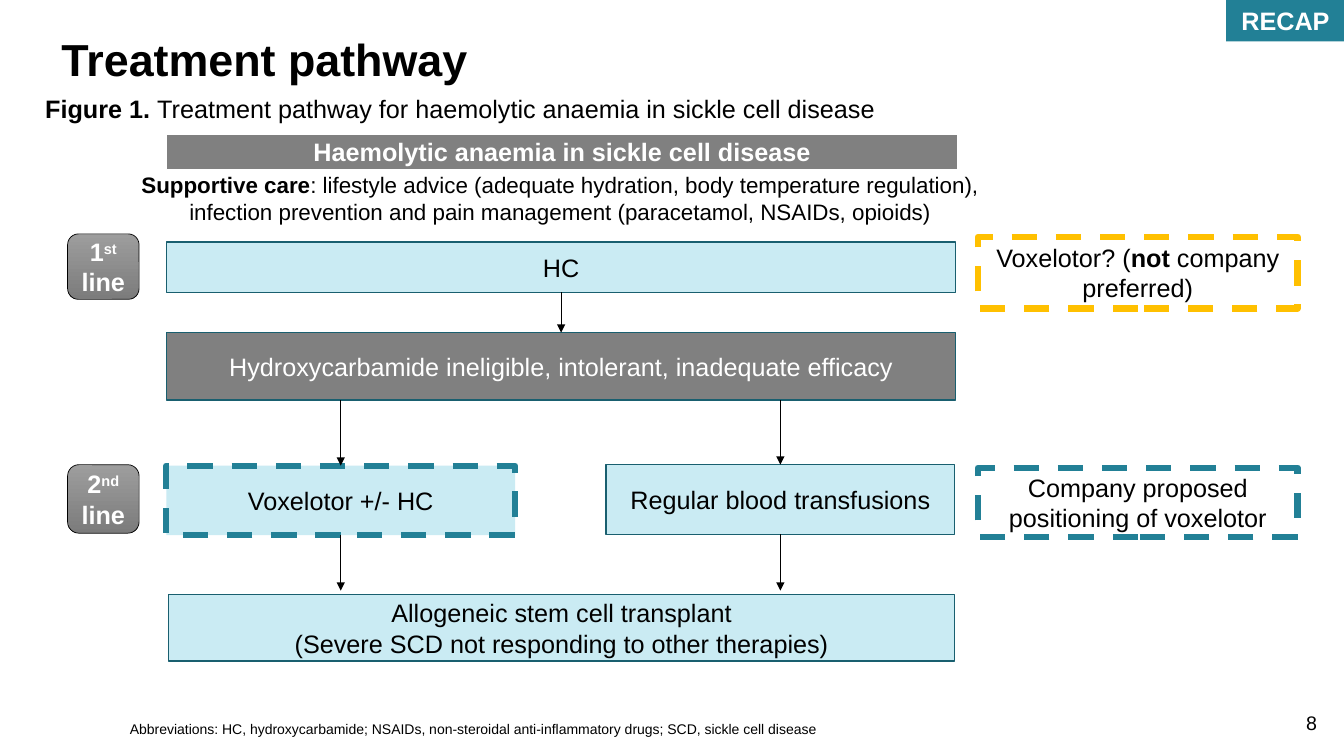
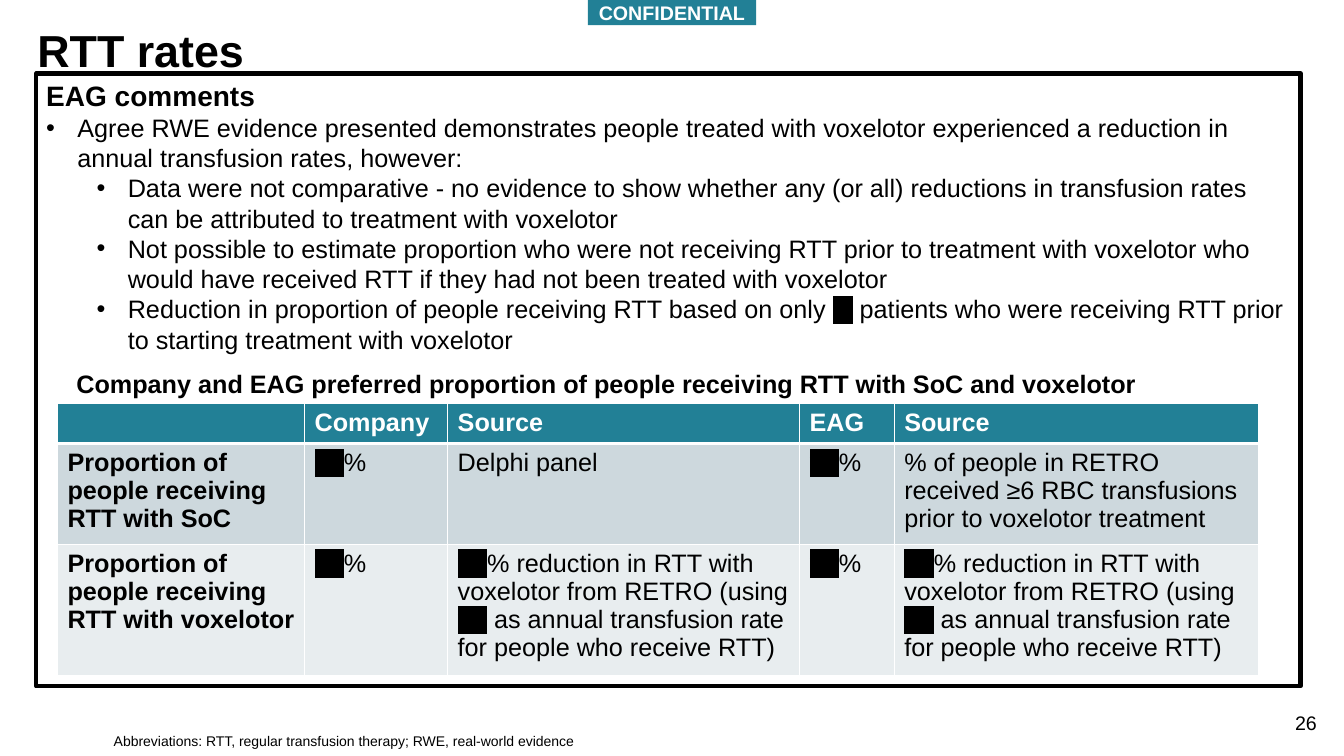
from lxml.etree import SubElement
from pptx import Presentation
from pptx.dml.color import RGBColor
from pptx.enum.dml import MSO_LINE
from pptx.enum.shapes import MSO_CONNECTOR, MSO_SHAPE
from pptx.enum.text import MSO_ANCHOR, PP_ALIGN
from pptx.oxml.ns import qn
from pptx.util import Inches, Pt

COLORS = {
    "black": "000000",
    "white": "FFFFFF",
    "teal": "228096",
    "dark_teal": "195F6F",
    "pale_blue": "CAEBF3",
    "grey": "808080",
    "amber": "FFC000",
    "light_grey": "9D9D9D",
    "deep_grey": "7C7C7C",
    "row_dark": "CDD8DD",
    "row_light": "E8EDEF",
}
RGB = {name: RGBColor.from_string(value) for name, value in COLORS.items()}
FONT = "Arial"
BOTTOM, TOP = 2, 0


def write_text(frame, text, size=18, color="black", bold=False,
               align=PP_ALIGN.LEFT, spacing=None, indents=()):
    paragraphs = text if isinstance(text, list) else [text]
    for index, content in enumerate(paragraphs):
        paragraph = frame.paragraphs[0] if index == 0 else frame.add_paragraph()
        paragraph.alignment = align
        if spacing:
            paragraph.line_spacing = spacing
        if indents and indents[index]:
            paragraph.level = 1 if indents[index] > 0.5 else 0
            properties = paragraph._p.get_or_add_pPr()
            properties.set("marL", str(Inches(indents[index])))
            properties.set("indent", str(Inches(-0.31)))
            SubElement(properties, qn("a:buFont")).set("typeface", FONT)
            SubElement(properties, qn("a:buChar")).set("char", "•")
        runs = ((content, ""),) if isinstance(content, str) else content
        for words, style in runs:
            run = paragraph.add_run()
            run.text = words
            run.font.name = FONT
            run.font.size = Pt(20 if style == "heading" else size)
            run.font.bold = bold or style in ("bold", "heading")
            run.font.color.rgb = RGB[color]
            properties = run._r.get_or_add_rPr()
            if style == "raised":
                properties.set("baseline", "30000")
            if style == "redacted":
                highlight = SubElement(properties, qn("a:highlight"))
                SubElement(highlight, qn("a:srgbClr")).set("val", COLORS["black"])
                properties.find(qn("a:solidFill")).addnext(highlight)


def add_box(slide, text, left, top, width, height, kind=None, fill=None, line=None,
            weight=1, dashed=False, anchor=MSO_ANCHOR.TOP, wrap=True, **text_format):
    place = [Inches(length) for length in (left, top, width, height)]
    if kind is None:
        shape = slide.shapes.add_textbox(*place)
    else:
        shape = slide.shapes.add_shape(kind, *place)
        shape.shadow.inherit = False
        if fill:
            shape.fill.solid()
            shape.fill.fore_color.rgb = RGB[fill]
        else:
            shape.fill.background()
        if line:
            shape.line.color.rgb = RGB[line]
            shape.line.width = Pt(weight)
            if dashed:
                shape.line.dash_style = MSO_LINE.DASH
        else:
            shape.line.fill.background()
    shape.text_frame.word_wrap = wrap
    shape.text_frame.vertical_anchor = anchor
    write_text(shape.text_frame, text, **text_format)
    return shape


presentation = Presentation()
presentation.slide_width = Inches(13.33)
presentation.slide_height = Inches(7.5)

CENTERED = {"kind": MSO_SHAPE.RECTANGLE, "anchor": MSO_ANCHOR.MIDDLE, "align": PP_ALIGN.CENTER}

slide_frames = [
    ("Treatment pathway", (0.51, 0.29), "8", "RECAP", (12.16, 0, 1.18, 0.41), 18,
     "Abbreviations: HC, hydroxycarbamide; NSAIDs, non-steroidal anti-inflammatory drugs; "
     "SCD, sickle cell disease", (1.19, 7.12)),
    ("RTT rates", (0.27, 0.2), "26", "CONFIDENTIAL", (5.83, 0, 1.67, 0.25), 14,
     "Abbreviations: RTT, regular transfusion therapy; RWE, real-world evidence", (1.03, 7.24)),
]
slides = []
for heading, heading_at, number, tag, tag_box, tag_size, footnote, footnote_at in slide_frames:
    slide = presentation.slides.add_slide(presentation.slide_layouts[5])
    title = slide.shapes.title
    title.left, title.top = [Inches(length) for length in heading_at]
    title.width, title.height = Inches(12.3), Inches(0.65)
    title.text_frame.vertical_anchor = MSO_ANCHOR.MIDDLE
    write_text(title.text_frame, heading, size=32, bold=True, spacing=0.9)
    add_box(slide, number, 12.65, 7, 0.51, 0.4, size=14, align=PP_ALIGN.RIGHT)
    add_box(slide, tag, *tag_box, fill="teal", size=tag_size, color="white", bold=True,
            wrap=False, **CENTERED)
    add_box(slide, footnote, *footnote_at, 11.3, 0.34, size=10, spacing=0.9)
    slides.append(slide)
pathway, rates = slides

add_box(pathway, (("Figure 1. ", "bold"),
                  ("Treatment pathway for haemolytic anaemia in sickle cell disease", "")),
        0.35, 0.88, 8.44, 0.4)
add_box(pathway, (("Supportive care", "bold"),
                  (": lifestyle advice (adequate hydration, body temperature regulation), "
                   "infection prevention and pain management (paracetamol, NSAIDs, opioids)", "")),
        1.01, 1.65, 9.09, 0.64, size=16, align=PP_ALIGN.CENTER)
add_box(pathway, "Haemolytic anaemia in sickle cell disease", 1.65, 1.33, 7.85, 0.35,
        fill="grey", line="white", color="white", bold=True, **CENTERED)

STEP = {"fill": "pale_blue", "line": "dark_teal", **CENTERED}
first_line = add_box(pathway, "HC", 1.65, 2.4, 7.83, 0.5, **STEP)
ineligible = add_box(pathway, "Hydroxycarbamide ineligible, intolerant, inadequate efficacy",
                     1.65, 3.3, 7.83, 0.67, color="white", **{**STEP, "fill": "grey"})
voxelotor = add_box(pathway, "Voxelotor +/- HC", 1.65, 4.62, 3.46, 0.69,
                    weight=4.5, dashed=True, **{**STEP, "line": "teal"})
transfusions = add_box(pathway, "Regular blood transfusions", 6.01, 4.61, 3.46, 0.69, **STEP)
add_box(pathway, ["Allogeneic stem cell transplant",
                  "(Severe SCD not responding to other therapies)"],
        1.67, 5.9, 7.8, 0.66, **STEP)

for digit, suffix, top, height in [("1", "st", 2.32, 0.65), ("2", "nd", 4.61, 0.68)]:
    badge = add_box(pathway, ((digit, ""), (suffix, "raised"), (" line", "")),
                    0.67, top, 0.71, height, line="black", weight=0.5, color="white", bold=True,
                    **{**CENTERED, "kind": MSO_SHAPE.ROUNDED_RECTANGLE})
    badge.fill.gradient()
    badge.fill.gradient_angle = 270
    for stop, shade in zip(badge.fill.gradient_stops, ("light_grey", "deep_grey")):
        stop.color.rgb = RGB[shade]

for note, top, height, line in [
    ((("Voxelotor? (", ""), ("not", "bold"), (" company preferred)", "")), 2.35, 0.71, "amber"),
    ("Company proposed positioning of voxelotor", 4.64, 0.69, "teal"),
]:
    add_box(pathway, note, 9.7, top, 3.17, height, fill="white", line=line,
            weight=4.5, dashed=True, **CENTERED)

for x, start, end, source, target in [
    (5.57, 2.9, 3.3, first_line, ineligible),
    (3.38, 3.97, 4.62, None, voxelotor),
    (7.74, 3.97, 4.61, None, transfusions),
    (3.38, 5.31, 5.86, voxelotor, None),
    (7.74, 5.3, 5.86, transfusions, None),
]:
    arrow = pathway.shapes.add_connector(
        MSO_CONNECTOR.STRAIGHT, Inches(x), Inches(start), Inches(x), Inches(end))
    if source:
        arrow.begin_connect(source, BOTTOM)
    if target:
        arrow.end_connect(target, TOP)
    arrow.line.color.rgb = RGB["black"]
    arrow.line.width = Pt(0.5)
    properties = arrow._element.spPr
    SubElement(properties.find(qn("a:ln")), qn("a:tailEnd")).set("type", "triangle")
    SubElement(properties, qn("a:effectLst"))

add_box(rates, [
    (("EAG comments", "heading"),),
    "Agree RWE evidence presented demonstrates people treated with voxelotor experienced "
    "a reduction in annual transfusion rates, however:",
    "Data were not comparative - no evidence to show whether any (or all) reductions in "
    "transfusion rates can be attributed to treatment with voxelotor",
    "Not possible to estimate proportion who were not receiving RTT prior to treatment with "
    "voxelotor who would have received RTT if they had not been treated with voxelotor",
    (("Reduction in proportion of people receiving RTT based on only ", ""), ("**", "redacted"),
     (" patients who were receiving RTT prior to starting treatment with voxelotor", "")),
], 0.36, 0.73, 12.54, 6.08, kind=MSO_SHAPE.RECTANGLE, line="black", weight=3,
    indents=(0, 0.31, 0.81, 0.81, 0.81))
add_box(rates, "Company and EAG preferred proportion of people receiving RTT with SoC and voxelotor",
        0.66, 3.6, 10.97, 0.4, bold=True)

percentage = (("***", "redacted"), ("%", ""))
reduction = (("***", "redacted"), ("% reduction in RTT with voxelotor from RETRO (using ", ""),
             ("***", "redacted"),
             (" as annual transfusion rate for people who receive RTT)", ""))
table_rows = [
    ("", "Company", "Source", "EAG", "Source"),
    ("Proportion of people receiving RTT with SoC", percentage, "Delphi panel", percentage,
     "% of people in RETRO received ≥6 RBC transfusions prior to voxelotor treatment"),
    ("Proportion of people receiving RTT with voxelotor", percentage, reduction, percentage,
     reduction),
]
column_widths = (2.45, 1.42, 3.49, 0.94, 3.61)
row_heights = (0.37, 0.95, 1.22)
row_fills = ("teal", "row_dark", "row_light")
table = rates.shapes.add_table(
    len(table_rows), len(column_widths), Inches(0.57), Inches(4),
    Inches(sum(column_widths)), Inches(sum(row_heights))).table
for column, width in zip(table.columns, column_widths):
    column.width = Inches(width)
for row_index, values in enumerate(table_rows):
    table.rows[row_index].height = Inches(row_heights[row_index])
    is_header = row_index == 0
    for column_index, value in enumerate(values):
        cell = table.cell(row_index, column_index)
        if value:
            write_text(cell.text_frame, value, color="white" if is_header else "black",
                       bold=is_header or column_index == 0)
        properties = cell._tc.get_or_add_tcPr()
        for side in ("lnL", "lnR", "lnT", "lnB"):
            heavy = (row_index, side) in ((0, "lnB"), (1, "lnT"))
            border = SubElement(properties, qn("a:" + side))
            border.set("w", str(Pt(3 if heavy else 1)))
            border_fill = SubElement(border, qn("a:solidFill"))
            SubElement(border_fill, qn("a:srgbClr")).set("val", COLORS["white"])
        cell.fill.solid()
        cell.fill.fore_color.rgb = RGB[row_fills[row_index]]

presentation.save("out.pptx")
